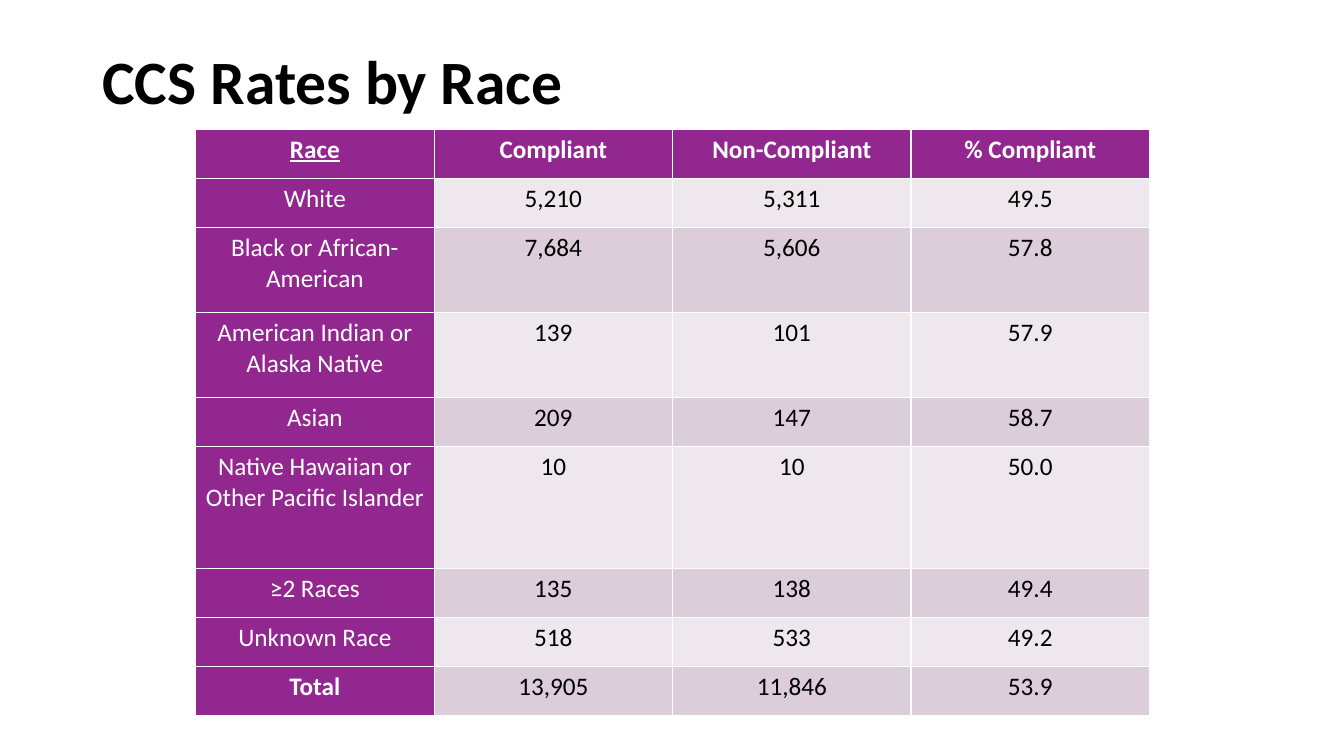
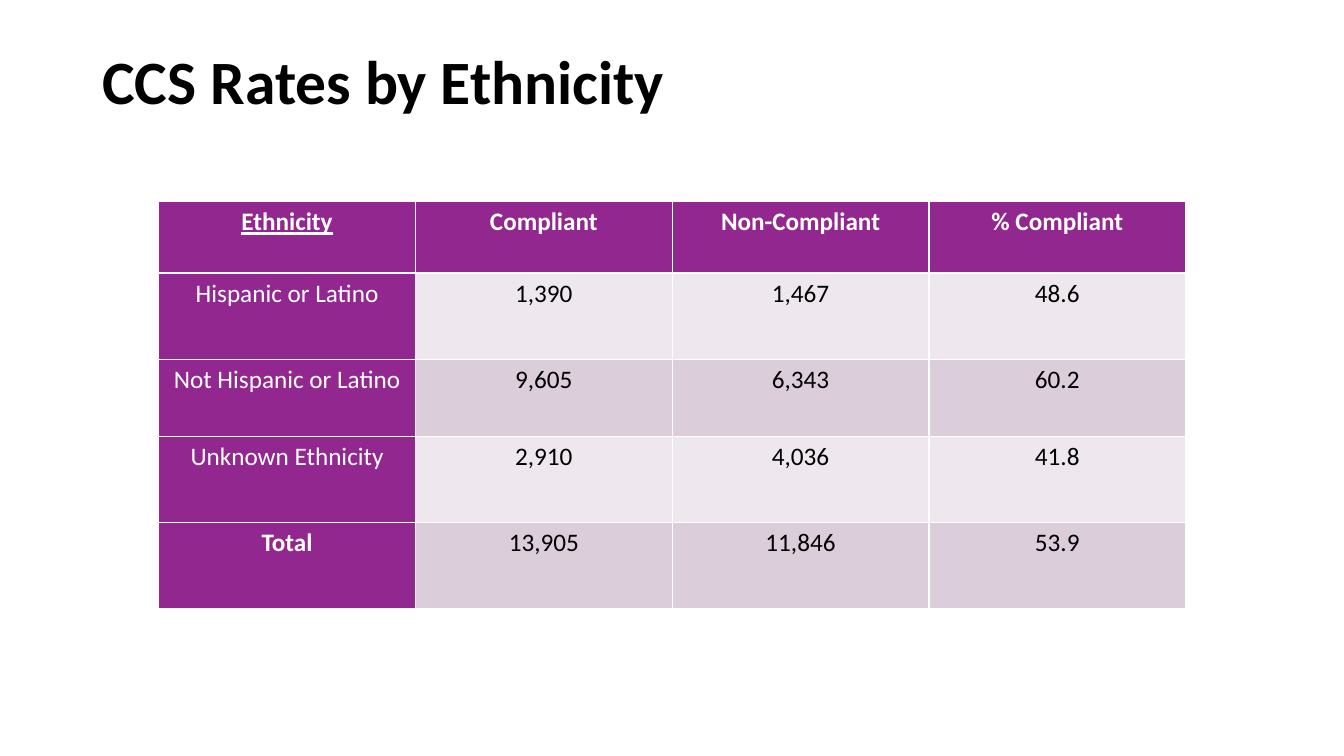
"""Build two slides with tables of CCS compliance rates by race and by ethnicity."""
import pptx
import pptx.dml.color
import pptx.enum.text
import pptx.oxml
import pptx.oxml.ns
import pptx.util
from pptx.util import Cm

RGBColor = pptx.dml.color.RGBColor
PURPLE = RGBColor(0x92, 0x27, 0x8F)
PALE = RGBColor(0xEE, 0xE8, 0xEE)
MAUVE = RGBColor(0xDC, 0xCD, 0xDB)
WHITE = RGBColor(0xFF, 0xFF, 0xFF)
BLACK = RGBColor(0x00, 0x00, 0x00)
FONT = "Calibri"
BLANK_LAYOUT = 6
MEASURES = ("Compliant", "Non-Compliant", "% Compliant")
TOTAL = ("Total", "13,905", "11,846", "53.9")

RACE_ROWS = [
    ("Race", *MEASURES),
    ("White", "5,210", "5,311", "49.5"),
    ("Black or African-American", "7,684", "5,606", "57.8"),
    ("American Indian or Alaska Native", "139", "101", "57.9"),
    ("Asian", "209", "147", "58.7"),
    ("Native Hawaiian or Other Pacific Islander", "10", "10", "50.0"),
    ("≥2 Races", "135", "138", "49.4"),
    ("Unknown Race", "518", "533", "49.2"),
    TOTAL,
]
RACE_HEIGHTS = [1.24, 1.24, 2.14, 2.14, 1.24, 3.06, 1.24, 1.24, 1.24]

ETHNICITY_ROWS = [
    ("Ethnicity", *MEASURES),
    ("Hispanic or Latino", "1,390", "1,467", "48.6"),
    ("Not Hispanic or Latino", "9,605", "6,343", "60.2"),
    ("Unknown Ethnicity", "2,910", "4,036", "41.8"),
    TOTAL,
]
ETHNICITY_HEIGHTS = [1.8, 2.17, 1.94, 2.17, 2.17]


def add_span(para, text, size, color, bold=False, underline=False):
    span = para.add_run()
    span.text = text
    span.font.name = FONT
    span.font.size = pptx.util.Pt(size)
    span.font.color.rgb = color
    span.font.bold = bold
    span.font.underline = underline


def add_title(slide, text):
    box = slide.shapes.add_textbox(Cm(2.33), Cm(1.01), Cm(29.21), Cm(2.24))
    frame = box.text_frame
    frame.word_wrap = True
    frame.vertical_anchor = pptx.enum.text.MSO_ANCHOR.MIDDLE
    para = frame.paragraphs[0]
    para.line_spacing = 0.9
    add_span(para, text, 44, BLACK, bold=True)


def set_borders(cell):
    properties = cell._tc.get_or_add_tcPr()
    for position, side in enumerate(("lnL", "lnR", "lnT", "lnB")):
        border = pptx.oxml.parse_xml(
            f'<a:{side} {pptx.oxml.ns.nsdecls("a")} w="12700"><a:solidFill>'
            f'<a:srgbClr val="{WHITE}"/></a:solidFill></a:{side}>'
        )
        properties.insert(position, border)


def fill_cell(cell, text, row, column):
    header, label = row == 0, column == 0
    dark = header or label
    cell.fill.solid()
    cell.fill.fore_color.rgb = PURPLE if dark else PALE if row % 2 else MAUVE
    cell.margin_left = cell.margin_right = Cm(0.2)
    set_borders(cell)
    para = cell.text_frame.paragraphs[0]
    para.alignment = pptx.enum.text.PP_ALIGN.CENTER
    add_span(para, text, 18, WHITE if dark else BLACK,
             bold=header or text == "Total", underline=header and label)


def add_rate_table(slide, rows, heights, left, top, column_width):
    columns = len(rows[0])
    frame = slide.shapes.add_table(len(rows), columns, Cm(left), Cm(top),
                                   Cm(column_width * columns), Cm(sum(heights)))
    table = frame.table
    for column in table.columns:
        column.width = Cm(column_width)
    for row, (texts, height) in enumerate(zip(rows, heights)):
        table.rows[row].height = Cm(height)
        for column, text in enumerate(texts):
            fill_cell(table.cell(row, column), text, row, column)


def add_rate_slide(deck, title, rows, heights, left, top, column_width):
    slide = deck.slides.add_slide(deck.slide_layouts[BLANK_LAYOUT])
    add_title(slide, title)
    add_rate_table(slide, rows, heights, left, top, column_width)


def main():
    deck = pptx.Presentation()
    deck.slide_width, deck.slide_height = Cm(33.87), Cm(19.05)
    add_rate_slide(deck, "CCS Rates by Race", RACE_ROWS, RACE_HEIGHTS, 4.93, 3.26, 6.01)
    add_rate_slide(deck, "CCS Rates by Ethnicity", ETHNICITY_ROWS, ETHNICITY_HEIGHTS, 4, 5.08, 6.47)
    deck.save("out.pptx")


if __name__ == "__main__":
    main()
